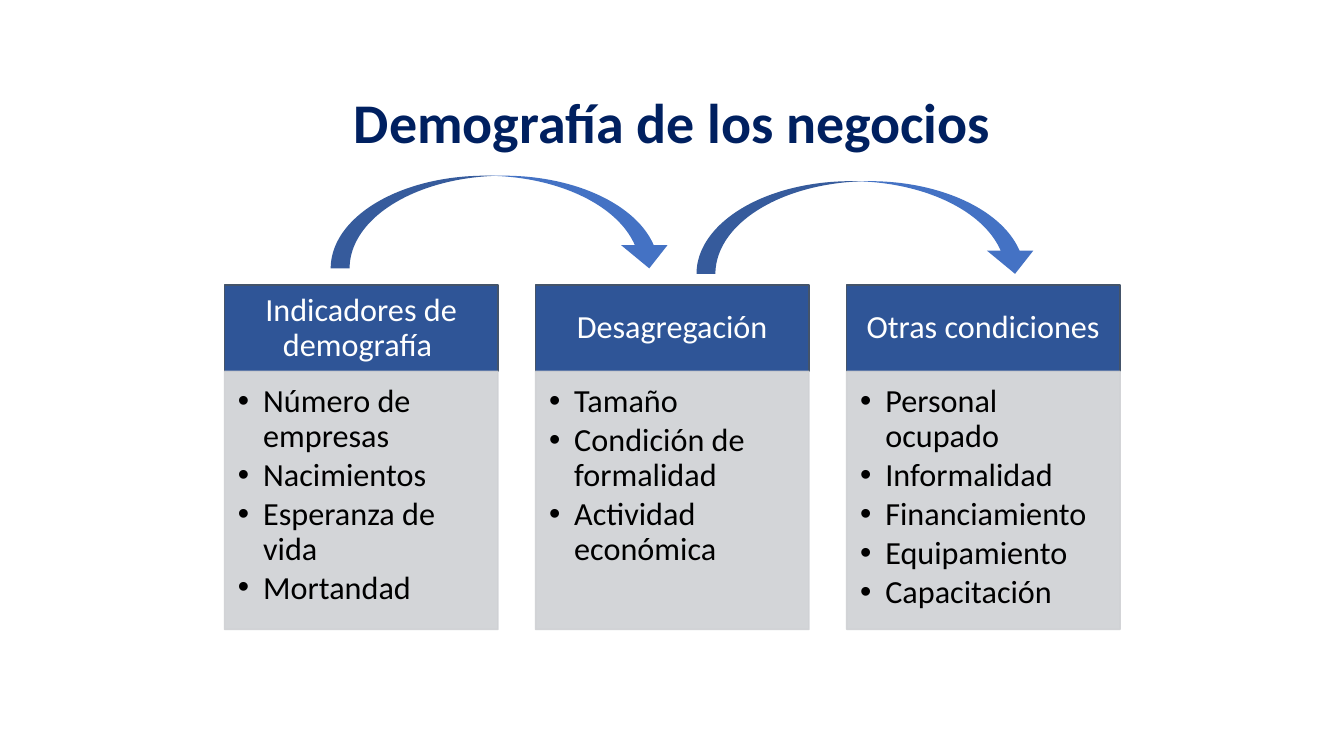
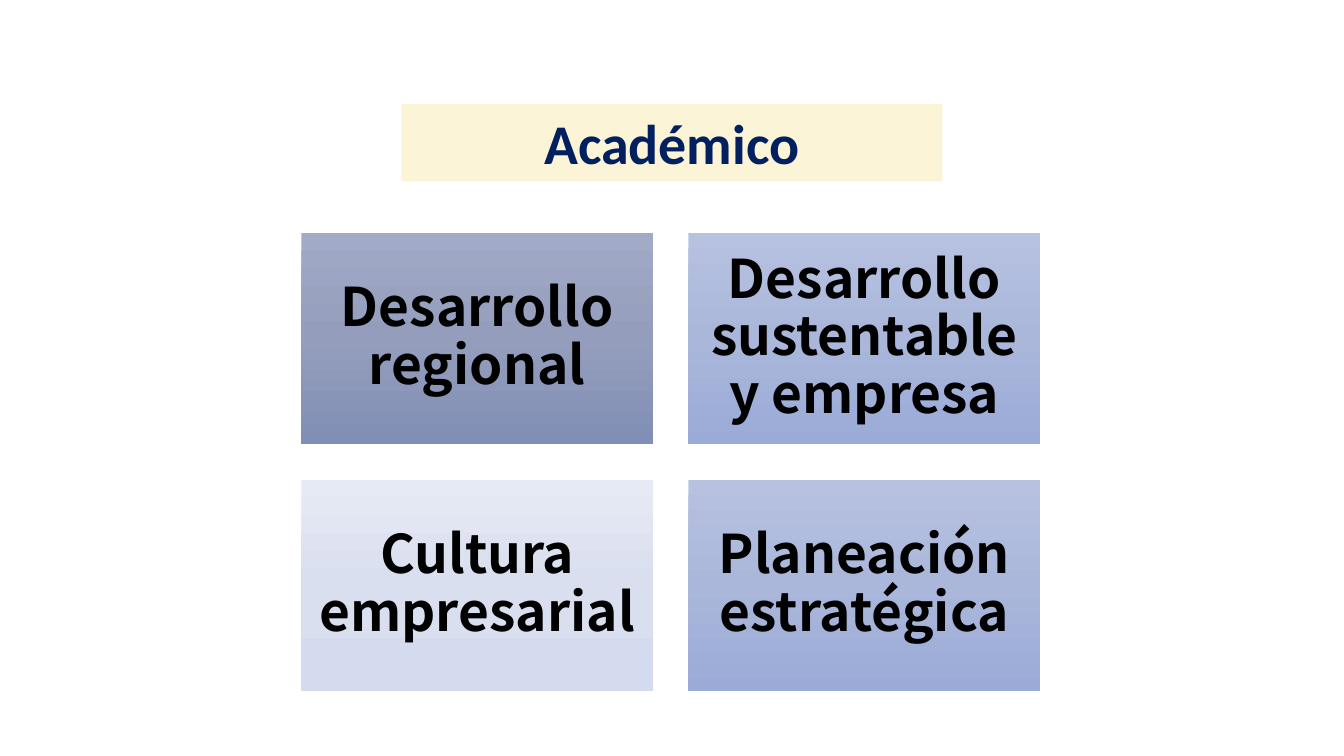
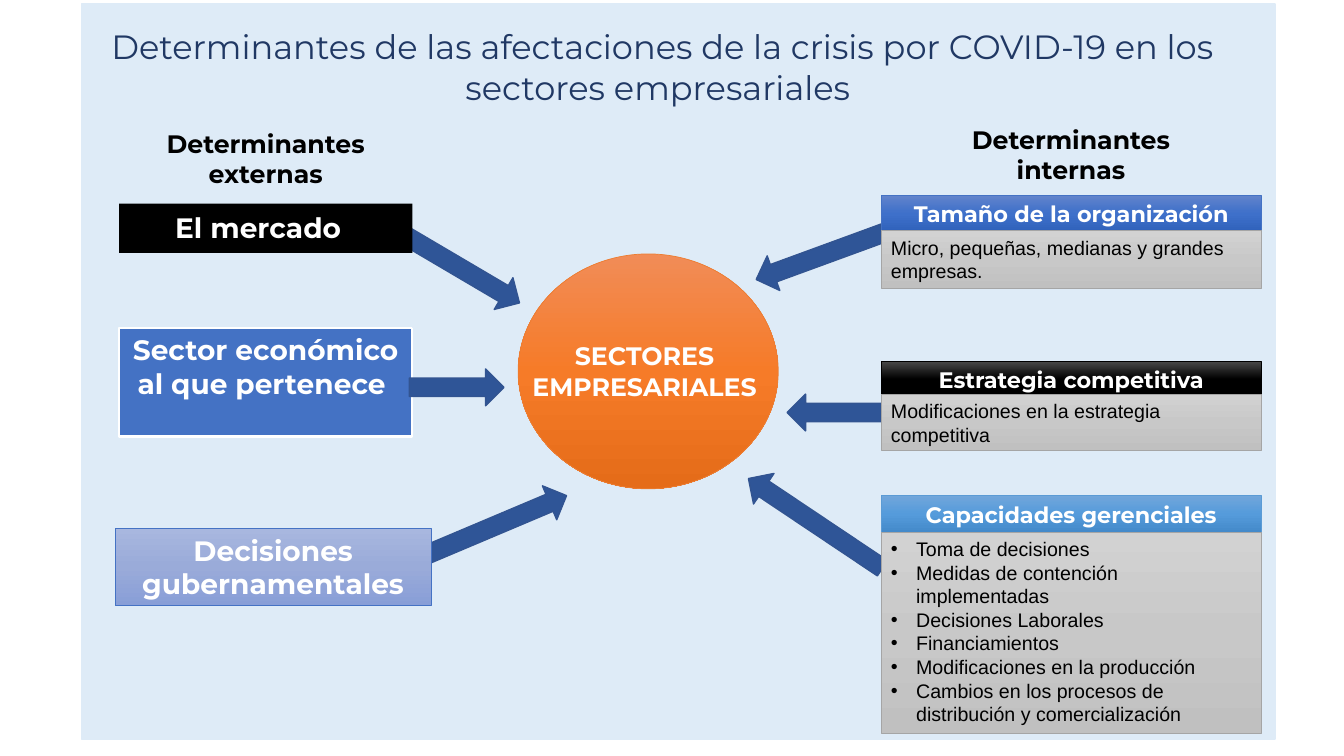
"""Build three slides on business demography, academic topics and crisis determinants."""
from copy import deepcopy

from lxml import etree
from pptx import Presentation
from pptx.dml.color import RGBColor
from pptx.enum.shapes import MSO_SHAPE
from pptx.enum.text import MSO_ANCHOR, MSO_AUTO_SIZE, PP_ALIGN
from pptx.oxml.ns import qn
from pptx.util import Pt

RECT, OVAL = MSO_SHAPE.RECTANGLE, MSO_SHAPE.OVAL
LEFT_ARROW, CURVED_ARROW = MSO_SHAPE.LEFT_ARROW, MSO_SHAPE.CURVED_DOWN_ARROW
TOP, MIDDLE = MSO_ANCHOR.TOP, MSO_ANCHOR.MIDDLE
LEFT, CENTER = PP_ALIGN.LEFT, PP_ALIGN.CENTER
NO_AUTOFIT = MSO_AUTO_SIZE.NONE

WHITE = RGBColor(0xFF, 0xFF, 0xFF)
BLACK = RGBColor(0x00, 0x00, 0x00)
NAVY = RGBColor(0x00, 0x20, 0x60)
DARK_BLUE = RGBColor(0x20, 0x38, 0x64)
DEEP_BLUE = RGBColor(0x2F, 0x55, 0x97)
ARROW_EDGE = RGBColor(0x32, 0x54, 0x91)
BLUE = RGBColor(0x44, 0x72, 0xC4)
SKY = RGBColor(0x5B, 0x9B, 0xD5)
PALE_BLUE = RGBColor(0xDE, 0xEB, 0xF7)
SLATE = RGBColor(0x44, 0x54, 0x6A)
SILVER = RGBColor(0xCF, 0xD1, 0xD4)
GRAY = RGBColor(0xA5, 0xA5, 0xA5)
ORANGE = RGBColor(0xED, 0x7D, 0x31)
CREAM = RGBColor(0xFC, 0xF4, 0xD6)

SLATE_FADE = [RGBColor(0xA1, 0xAA, 0xC7), RGBColor(0x94, 0x9E, 0xBC), RGBColor(0x81, 0x8E, 0xB5)]
PERIWINKLE_FADE = [RGBColor(0xB7, 0xC2, 0xE1), RGBColor(0xAA, 0xB7, 0xDA), RGBColor(0x9B, 0xAB, 0xD8)]
MIST_FADE = [RGBColor(0xE6, 0xEA, 0xF4), RGBColor(0xDA, 0xDF, 0xEF), RGBColor(0xD5, 0xDB, 0xEE)]
BLACK_FADE = [RGBColor(0x4B, 0x4B, 0x4B), BLACK, BLACK]
GRAY_FADE = [RGBColor(0xD2, 0xD2, 0xD2), RGBColor(0xC8, 0xC8, 0xC8), RGBColor(0xC0, 0xC0, 0xC0)]
SKY_FADE = [RGBColor(0x71, 0xA6, 0xDB), RGBColor(0x55, 0x9B, 0xDB), RGBColor(0x44, 0x8A, 0xCA)]
ORANGE_FADE = [RGBColor(0xF1, 0x8C, 0x57), RGBColor(0xF6, 0x7B, 0x28), RGBColor(0xE5, 0x6C, 0x19)]
BLUE_FADE = [RGBColor(0x61, 0x83, 0xCB), RGBColor(0x3E, 0x70, 0xCA), RGBColor(0x30, 0x62, 0xBB)]
LILAC_FADE = [RGBColor(0xA8, 0xB7, 0xDF), RGBColor(0x9A, 0xAB, 0xD9), RGBColor(0x88, 0x9E, 0xD7)]


def add_panel(slide, kind, box, fill, edge=None, edge_width=1):
    """Add a shape with a solid or three-stop vertical fill."""
    panel = slide.shapes.add_shape(kind, *map(Pt, box))
    panel.shadow.inherit = False
    if isinstance(fill, list):
        panel.fill.gradient()
        panel.fill.gradient_angle = 270
        stops = panel._element.spPr.find(".//" + qn("a:gsLst"))
        stops.insert(1, deepcopy(stops[0]))
        for stop, color, position in zip(panel.fill.gradient_stops, fill, (0, 0.5, 1)):
            stop.color.rgb = color
            stop.position = position
    else:
        panel.fill.solid()
        panel.fill.fore_color.rgb = fill
    if edge is None:
        panel.line.fill.background()
    else:
        panel.line.color.rgb = edge
        panel.line.width = Pt(edge_width)
    return panel


def write(holder, lines, style, align=CENTER, anchor=TOP, insets=(7.2, 3.6, 7.2, 3.6),
          spacing=1.0, after=0, bullets=False):
    """Fill a shape with one formatted paragraph per line."""
    frame = holder.text_frame
    left, top, right, bottom = map(Pt, insets)
    layout = dict(word_wrap=True, auto_size=NO_AUTOFIT, vertical_anchor=anchor,
                  margin_left=left, margin_top=top, margin_right=right, margin_bottom=bottom)
    for key, value in layout.items():
        setattr(frame, key, value)
    for index, line in enumerate(lines):
        paragraph = frame.add_paragraph() if index else frame.paragraphs[0]
        paragraph.alignment = align
        paragraph.line_spacing = spacing
        paragraph.space_after = Pt(after)
        if bullets:
            properties = paragraph._p.get_or_add_pPr()
            properties.set("marL", str(Pt(18)))
            properties.set("indent", str(Pt(-18)))
            etree.SubElement(properties, qn("a:buFont")).set("typeface", "Arial")
            etree.SubElement(properties, qn("a:buChar")).set("char", "•")
        run = paragraph.add_run()
        run.text = line
        for key, value in style.items():
            if key == "color":
                run.font.color.rgb = value
            else:
                setattr(run.font, key, value)


TITLE = dict(name="Calibri", size=Pt(40), bold=True, color=NAVY)
LIGHT_TITLE = dict(name="Montserrat", size=Pt(24), bold=False, color=DARK_BLUE)
CARD_HEAD = dict(name="Calibri", size=Pt(23), color=WHITE)
CARD_BODY = dict(CARD_HEAD, color=BLACK)
TOPIC = dict(name="Noto Sans CJK SC", size=Pt(38), bold=True, color=BLACK)
EXTERNAL = dict(name="Montserrat", size=Pt(20), bold=True, color=WHITE)
HUB = dict(EXTERNAL, size=Pt(18))
COLUMN_HEAD = dict(HUB, color=BLACK)
INTERNAL_HEAD = dict(EXTERNAL, size=Pt(16))
INTERNAL_BODY = dict(name="Arial", size=Pt(14), color=BLACK)

deck = Presentation()
deck.slide_width, deck.slide_height = Pt(960), Pt(540)

titles = [
    ("Demografía de los negocios", (144, 59, 672, 55.4), TITLE),
    ("Académico", (286.6, 74.2, 386.6, 55.4), TITLE),
    ("Determinantes de las afectaciones de la crisis por COVID-19 en los sectores empresariales ",
     (69.1, 15.1, 807.8, 65.5), LIGHT_TITLE),
]
for text, box, style in titles:
    slide = deck.slides.add_slide(deck.slide_layouts[5])
    title = slide.shapes.title
    title.left, title.top, title.width, title.height = map(Pt, box)
    write(title, [text], style)
demography, academic, determinants = deck.slides

cards = [
    ("Indicadores de demografía ", ["Número de empresas", "Nacimientos", "Esperanza de vida", "Mortandad"]),
    ("Desagregación", ["Tamaño", "Condición de formalidad", "Actividad económica"]),
    ("Otras condiciones",
     ["Personal ocupado", "Informalidad", "Financiamiento", "Equipamiento", "Capacitación"]),
]
for column, (heading, items) in enumerate(cards):
    left = 160.4 + 222.2 * column
    head = add_panel(demography, RECT, (left, 203.6, 195.3, 61.6), DEEP_BLUE, SLATE)
    write(head, [heading], CARD_HEAD, anchor=MIDDLE, insets=(12.9, 7.3, 12.9, 7.3), spacing=0.9)
    body = add_panel(demography, RECT, (left, 265.2, 195.3, 184.4), SILVER, SILVER)
    for color in list(body._element.spPr.iter(qn("a:srgbClr"))):
        etree.SubElement(color, qn("a:alpha")).set("val", "90000")
    write(body, items, CARD_BODY, LEFT, insets=(9.6, 9.6, 12.9, 14.5), spacing=0.9, after=3, bullets=True)

for left, top in [(236.2, 125.5), (497.5, 129.4)]:
    arc = add_panel(demography, CURVED_ARROW, (left, top, 244.1, 66.2), BLUE)
    for index, value in enumerate((0.204, 0.5, 0.25)):
        arc.adjustments[index] = value

academic.shapes.title.fill.solid()
academic.shapes.title.fill.fore_color.rgb = CREAM
topics = [
    ("Desarrollo regional", SLATE_FADE),
    ("Desarrollo sustentable y empresa", PERIWINKLE_FADE),
    ("Cultura empresarial", MIST_FADE),
    ("Planeación estratégica", PERIWINKLE_FADE),
]
for index, (text, fade) in enumerate(topics):
    row, column = divmod(index, 2)
    tile = add_panel(academic, RECT, (215.2 + 276.5 * column, 166.4 + 176.4 * row, 251.4, 150.6), fade)
    write(tile, [text], TOPIC, anchor=MIDDLE, insets=(11.5,) * 4, spacing=0.9)

backdrop = add_panel(determinants, RECT, (58.3, 2.9, 852.5, 524.9), PALE_BLUE, PALE_BLUE)
determinants.shapes._spTree.insert(2, backdrop._element)

sector = add_panel(determinants, RECT, (85, 234, 209.5, 77.8), BLUE, WHITE, 1.5)
write(sector, ["Sector económico al que pertenece "], EXTERNAL)
add_panel(determinants, OVAL, (370.1, 181.4, 185.8, 167.8), ORANGE_FADE, ORANGE, 0.5)

labels = [
    ("Determinantes externas", (77.8, 87.8, 223.9, 49.7), COLUMN_HEAD),
    ("Determinantes internas", (663.1, 85, 203.8, 49.7), COLUMN_HEAD),
    ("SECTORES EMPRESARIALES", (354.2, 239.8, 212.4, 49.7), HUB),
]
for text, box, style in labels:
    write(determinants.shapes.add_textbox(*map(Pt, box)), [text], style)

arrows = [
    (537.1, 169.2, 100.8, 339.9),
    (524.9, 360.7, 115.2, 33.8),
    (562.3, 281.5, 67, 0),
    (277.9, 177.8, 100.1, 210.5),
    (292.3, 263.5, 67.7, 180),
    (281.5, 365.8, 128.2, 157.1),
]
for left, top, width, turn in arrows:
    arrow = add_panel(determinants, LEFT_ARROW, (left, top, width, 26.3), DEEP_BLUE, ARROW_EDGE)
    arrow.rotation = turn

market = add_panel(determinants, RECT, (85, 145.4, 209.5, 35.3), BLACK)
write(market, ["El mercado"], EXTERNAL, insets=(11.5, 5, 22.3, 3.6))
decisions = add_panel(determinants, RECT, (82.1, 377.3, 226.1, 55.4), LILAC_FADE, BLUE, 0.5)
write(decisions, ["Decisiones gubernamentales"], EXTERNAL)

internals = [
    ("Tamaño de la organización", BLUE_FADE, BLUE, 139.7, 164.9, 41,
     ["Micro, pequeñas, medianas y grandes empresas."]),
    ("Estrategia competitiva", BLACK_FADE, BLACK, 257.8, 281.5, 40.3,
     ["Modificaciones en la estrategia competitiva"]),
    ("Capacidades gerenciales", SKY_FADE, SKY, 354.2, 380.2, 143.3,
     ["Toma de decisiones", "Medidas de contención implementadas", "Decisiones Laborales",
      "Financiamientos", "Modificaciones en la producción",
      "Cambios en los procesos de distribución y comercialización"]),
]
for heading, fade, edge, head_top, body_top, body_height, items in internals:
    head = add_panel(determinants, RECT, (629.3, head_top, 271.8, 25.9), fade, edge, 0.5)
    write(head, [heading], INTERNAL_HEAD)
    body = add_panel(determinants, RECT, (629.3, body_top, 271.8, body_height), GRAY_FADE, GRAY, 0.5)
    write(body, items, INTERNAL_BODY, LEFT, bullets=len(items) > 1)

deck.save("out.pptx")
